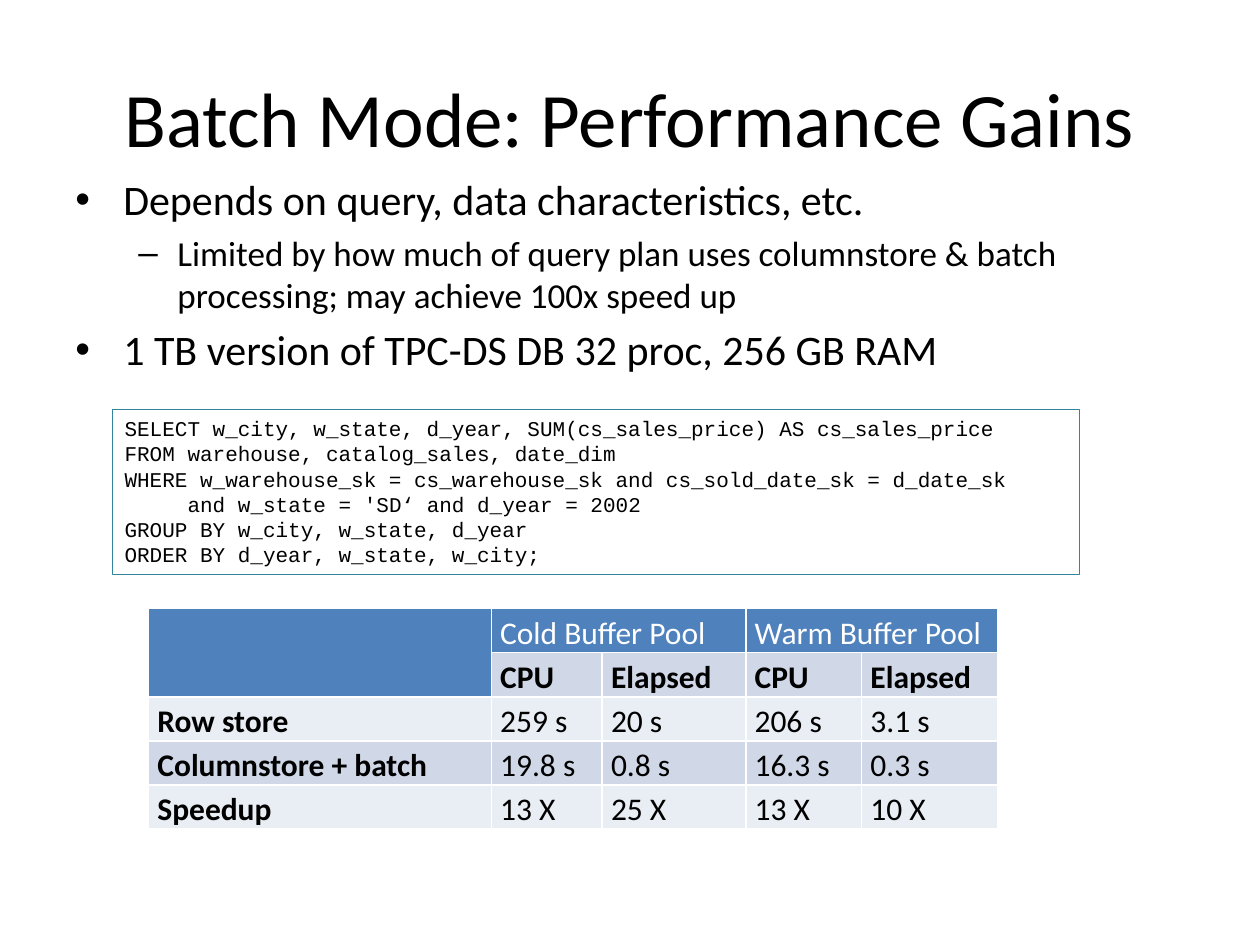
"""Build the batch mode performance slide."""
from dataclasses import dataclass

from lxml import etree
from pptx import Presentation
from pptx.dml.color import RGBColor
from pptx.enum.shapes import MSO_SHAPE
from pptx.enum.text import MSO_ANCHOR, MSO_AUTO_SIZE, PP_ALIGN
from pptx.oxml.ns import qn
from pptx.util import Inches, Pt

RECT = MSO_SHAPE.RECTANGLE
TOP, MID = MSO_ANCHOR.TOP, MSO_ANCHOR.MIDDLE
GROW = MSO_AUTO_SIZE.SHAPE_TO_FIT_TEXT
LEFT, CENTER = PP_ALIGN.LEFT, PP_ALIGN.CENTER


@dataclass(frozen=True)
class Theme:
    sans: str = "Calibri"
    mono: str = "Courier New"
    ink: str = "000000"
    white: str = "FFFFFF"
    head: str = "4F81BD"
    dark: str = "D0D8E8"
    light: str = "E9EDF4"
    frame: str = "31859C"
    title: int = 44
    main: int = 24
    sub: int = 20
    cell: int = 18
    code: int = 12


def write(para, text, size, face, color, bold=False):
    run = para.add_run()
    run.text = text
    run.font.size = Pt(size)
    run.font.name = face
    run.font.bold = bold
    run.font.color.rgb = RGBColor.from_string(color)


def indent(para, left, first=0, mark=None):
    props = para._p.get_or_add_pPr()
    props.set("marL", str(Inches(left)))
    props.set("indent", str(Inches(first)))
    if mark:
        etree.SubElement(props, qn("a:buFont")).set("typeface", "Arial")
        etree.SubElement(props, qn("a:buChar")).set("char", mark)


look = Theme()
deck = Presentation()
deck.slide_width, deck.slide_height = Inches(10), Inches(7.5)
COL, ROW = deck.slide_width / 100, deck.slide_height / 75
slide = deck.slides.add_slide(deck.slide_layouts[6])
shapes = slide.shapes

title = shapes.add_textbox(int(5 * COL), int(3 * ROW), int(90 * COL), int(12.5 * ROW))
frame = title.text_frame
frame.word_wrap = True
frame.vertical_anchor = MID
para = frame.paragraphs[0]
para.alignment = CENTER
write(para, "Batch Mode: Performance Gains", look.title, look.sans, look.ink)

points = [
    (0, "Depends on query, data characteristics, etc."),
    (1, "Limited by how much of query plan uses columnstore & batch "
        "processing; may achieve 100x speed up"),
    (0, "1 TB version of TPC-DS DB 32 proc, 256 GB RAM"),
]
levels = [(look.main, 0.38, -0.38, "•"), (look.sub, 0.81, -0.31, "–")]
body = shapes.add_textbox(int(5 * COL), int(13.3 * ROW), int(92.5 * COL), int(54 * ROW))
frame = body.text_frame
frame.word_wrap = True
for i, (level, text) in enumerate(points):
    para = frame.add_paragraph() if i else frame.paragraphs[0]
    size, left, first, mark = levels[level]
    para.level = level
    para.space_before = Pt(size * 0.2)
    indent(para, left, first, mark)
    write(para, text, size, look.sans, look.ink)

heads = ["", "Cold Buffer Pool", "", "Warm Buffer Pool", ""]
rows = [
    heads,
    ["", "CPU", "Elapsed", "CPU", "Elapsed"],
    ["Row store", "259 s", "20 s", "206 s", "3.1 s"],
    ["Columnstore + batch", "19.8 s", "0.8 s", "16.3 s", "0.3 s"],
    ["Speedup", "13 X", "25 X", "13 X", "10 X"],
]
widths = [27.2, 8.8, 11.4, 9.2, 10.8]
high = 3.5
grid = shapes.add_table(len(rows), len(widths), int(11.8 * COL), int(48.3 * ROW),
                        int(sum(widths) * COL), int(len(rows) * high * ROW)).table
for column, width in zip(grid.columns, widths):
    column.width = int(width * COL)
for r, texts in enumerate(rows):
    grid.rows[r].height = int(high * ROW)
    for c, text in enumerate(texts):
        cell = grid.cell(r, c)
        cell.vertical_anchor = MID
        cell.margin_left = cell.margin_right = Inches(0.07)
        cell.margin_top = cell.margin_bottom = 0
        props = cell._tc.get_or_add_tcPr()
        for side in ("lnL", "lnR", "lnT", "lnB"):
            line = etree.SubElement(props, qn(f"a:{side}"), w=str(Pt(1)))
            fill = etree.SubElement(line, qn("a:solidFill"))
            etree.SubElement(fill, qn("a:srgbClr"), val=look.white)
        top = r == 0
        shade = look.head if top or (r == 1 and c == 0) else (look.light, look.dark)[r % 2]
        cell.fill.solid()
        cell.fill.fore_color.rgb = RGBColor.from_string(shade)
        para = cell.text_frame.paragraphs[0]
        para.line_spacing = 1.15
        para.font.size = Pt(look.cell)
        if text:
            write(para, text, look.cell, look.sans, look.white if top else look.ink,
                  r == 1 or (c == 0 and r > 1))
for start, end in (((0, 0), (1, 0)), ((0, 1), (0, 2)), ((0, 3), (0, 4))):
    grid.cell(*start).merge(grid.cell(*end))

query = [
    (0, "SELECT w_city, w_state, d_year, SUM(cs_sales_price) AS cs_sales_price"),
    (0, "FROM warehouse, catalog_sales, date_dim"),
    (0, "WHERE w_warehouse_sk = cs_warehouse_sk and cs_sold_date_sk = d_date_sk"),
    (0.5, "and w_state = 'SD‘ and d_year = 2002"),
    (0, "GROUP BY w_city, w_state, d_year"),
    (0, "ORDER BY d_year, w_state, w_city;"),
]
box = shapes.add_shape(RECT, int(8.9 * COL), int(32.5 * ROW), int(76.8 * COL), int(13.1 * ROW))
box.shadow.inherit = False
box.fill.background()
box.line.color.rgb = RGBColor.from_string(look.frame)
box.line.width = Pt(0.75)
frame = box.text_frame
frame.word_wrap = True
frame.auto_size = GROW
frame.vertical_anchor = TOP
for i, (left, text) in enumerate(query):
    para = frame.add_paragraph() if i else frame.paragraphs[0]
    para.alignment = LEFT
    indent(para, left)
    write(para, text, look.code, look.mono, look.ink)

deck.save("out.pptx")
